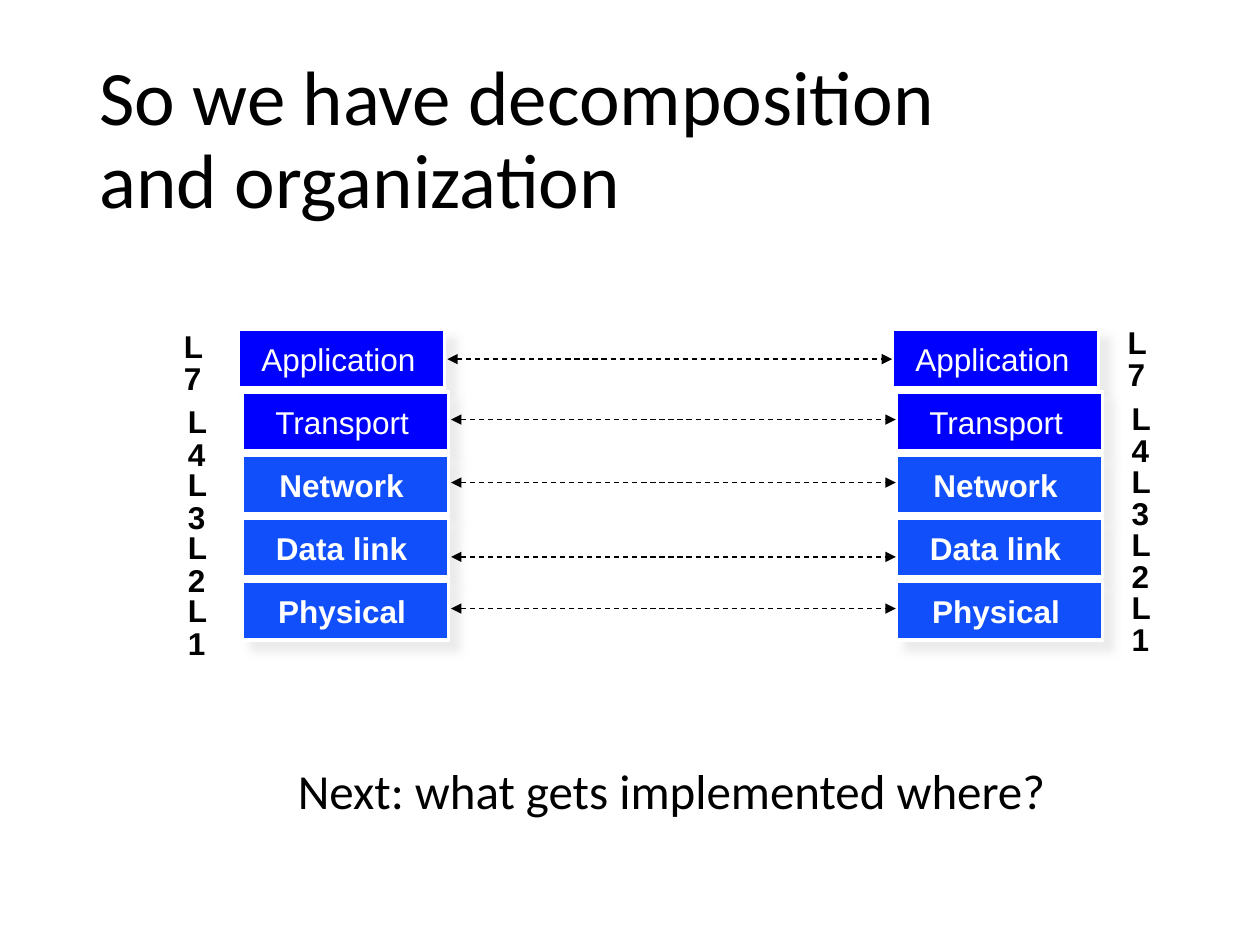
import pptx
import pptx.dml.color
import pptx.enum.dml
import pptx.enum.shapes
import pptx.enum.text
import pptx.oxml
import pptx.oxml.ns
import pptx.util
from dataclasses import dataclass

RGBColor = pptx.dml.color.RGBColor
BLACK = RGBColor(0x00, 0x00, 0x00)
WHITE = RGBColor(0xFF, 0xFF, 0xFF)
BLUE = RGBColor(0x00, 0x00, 0xFF)
LIGHT_BLUE = RGBColor(0x11, 0x4F, 0xFB)

EMU_PER_PX = 9144  # 100 px to the inch
ROW_PITCH = 50
BOX_WIDTH, BOX_HEIGHT = 164, 47
LABEL_HEIGHT = 36

ANCHOR = pptx.enum.text.MSO_ANCHOR
ALIGN = pptx.enum.text.PP_ALIGN
TITLE_FONT = {"name": "Calibri", "size": pptx.util.Pt(44)}
NOTE_FONT = {"name": "Calibri", "size": pptx.util.Pt(28)}
LAYER_FONT = {"name": "Arial", "size": pptx.util.Pt(18)}


@dataclass
class Layer:
    name: str
    tag: str
    label_width: int
    fill: RGBColor
    bold: bool
    shift: int = 0      # sideways offset of the whole row
    tag_drop: int = 10  # tag position below the top of the box
    link_drop: int = 22  # arrow position below the top of the box


LAYERS = [
    Layer("Application", "L7", 151, BLUE, False, shift=-3, tag_drop=0, link_drop=24),
    Layer("Transport", "L4", 131, BLUE, False),
    Layer("Network", "L3", 114, LIGHT_BLUE, True),
    Layer("Data link", "L2", 120, LIGHT_BLUE, True, link_drop=31),
    Layer("Physical", "L1", 117, LIGHT_BLUE, True),
]


def px(length):
    return pptx.util.Emu(length * EMU_PER_PX)


def place(*lengths):
    return [px(length) for length in lengths]


def set_values(target, values):
    for name, value in values.items():
        setattr(target, name, value)


def append_xml(parent, xml):
    declaration = pptx.oxml.ns.nsdecls("a")
    parent.append(pptx.oxml.parse_xml(xml.replace(" ", f" {declaration} ", 1)))


def write_text(shape, lines, font, color, frame, paragraph_format, margins=None):
    """Fill a shape with one paragraph; lines are parted by line breaks."""
    text_frame = shape.text_frame
    set_values(text_frame, frame)
    if margins:
        sides = ("margin_left", "margin_top", "margin_right", "margin_bottom")
        set_values(text_frame, dict(zip(sides, place(*margins))))
    paragraph = text_frame.paragraphs[0]
    set_values(paragraph, paragraph_format)
    for index, line in enumerate(lines):
        if index:
            paragraph.add_line_break()
        run = paragraph.add_run()
        run.text = line
        set_values(run.font, font)
        run.font.color.rgb = color


def add_title(slide, left, top, width, height):
    box = slide.shapes.add_textbox(*place(left, top, width, height))
    write_text(box, ["So we have decomposition", "and organization"], TITLE_FONT, BLACK,
               {"word_wrap": True, "vertical_anchor": ANCHOR.MIDDLE},
               {"line_spacing": 0.9})


def add_note(slide, left, top, width, height):
    box = slide.shapes.add_textbox(*place(left, top, width, height))
    write_text(box, ["Next: what gets implemented where?"], NOTE_FONT, BLACK,
               {"word_wrap": True},
               {"line_spacing": 0.9, "alignment": ALIGN.CENTER},
               margins=(10, 67, 10, 5))


def add_layer_box(slide, layer, left, top):
    group = slide.shapes.add_group_shape()
    # Shadowed box
    box = group.shapes.add_shape(pptx.enum.shapes.MSO_SHAPE.RECTANGLE,
                                 *place(left, top, BOX_WIDTH, BOX_HEIGHT))
    box.fill.solid()
    box.fill.fore_color.rgb = layer.fill
    box.line.color.rgb = WHITE
    box.line.width = pptx.util.Pt(2)
    append_xml(box._element.spPr,
               '<a:effectLst ><a:outerShdw blurRad="63500" dist="101600" dir="2700000" '
               'algn="ctr" rotWithShape="0"><a:srgbClr val="E7E6E6">'
               '<a:alpha val="75000"/></a:srgbClr></a:outerShdw></a:effectLst>')
    # Centred name
    label_left = left + (BOX_WIDTH + 1 - layer.label_width) // 2
    label = group.shapes.add_textbox(
        *place(label_left, top + 6, layer.label_width, LABEL_HEIGHT))
    if not layer.bold:
        label.fill.solid()
        label.fill.fore_color.rgb = layer.fill
    write_text(label, [layer.name], {**LAYER_FONT, "bold": layer.bold}, WHITE,
               {"word_wrap": False, "vertical_anchor": ANCHOR.MIDDLE},
               {"alignment": ALIGN.CENTER}, margins=(4, 4, 10, 4))


def add_stack(slide, left, top, tag_left, tag_rise):
    for row, layer in enumerate(LAYERS):
        add_layer_box(slide, layer, left + layer.shift, top + row * ROW_PITCH)
    for row, layer in enumerate(LAYERS):
        tag_top = top + row * ROW_PITCH + layer.tag_drop - tag_rise
        tag = slide.shapes.add_textbox(
            *place(left + layer.shift + tag_left, tag_top, 39, 32))
        write_text(tag, [layer.tag], {**LAYER_FONT, "bold": True}, BLACK,
                   {"word_wrap": True}, {"line_spacing": 0.85}, margins=(4, 3, 7, 3))


def add_links(slide, left, right, top):
    for row, layer in enumerate(LAYERS):
        height = top + row * ROW_PITCH + layer.link_drop
        link = slide.shapes.add_connector(
            pptx.enum.shapes.MSO_CONNECTOR.STRAIGHT,
            *place(left + layer.shift, height, right + layer.shift, height))
        link.line.color.rgb = BLACK
        link.line.width = pptx.util.Pt(0.75)
        link.line.dash_style = pptx.enum.dml.MSO_LINE.DASH
        line = link.line._get_or_add_ln()
        for end in ("headEnd", "tailEnd"):
            append_xml(line, f'<a:{end} type="triangle"/>')
        append_xml(link._element.spPr, "<a:effectLst />")


def main():
    presentation = pptx.Presentation()
    presentation.slide_width, presentation.slide_height = place(1000, 750)
    slide = presentation.slides.add_slide(presentation.slide_layouts[6])

    add_note(slide, 83, 542, 900, 183)
    add_stack(slide, 711, 261, tag_left=183, tag_rise=3)
    add_stack(slide, 192, 261, tag_left=-47, tag_rise=0)
    add_links(slide, 358, 711, 261)
    add_title(slide, 69, 40, 862, 145)
    presentation.save("out.pptx")


if __name__ == "__main__":
    main()
